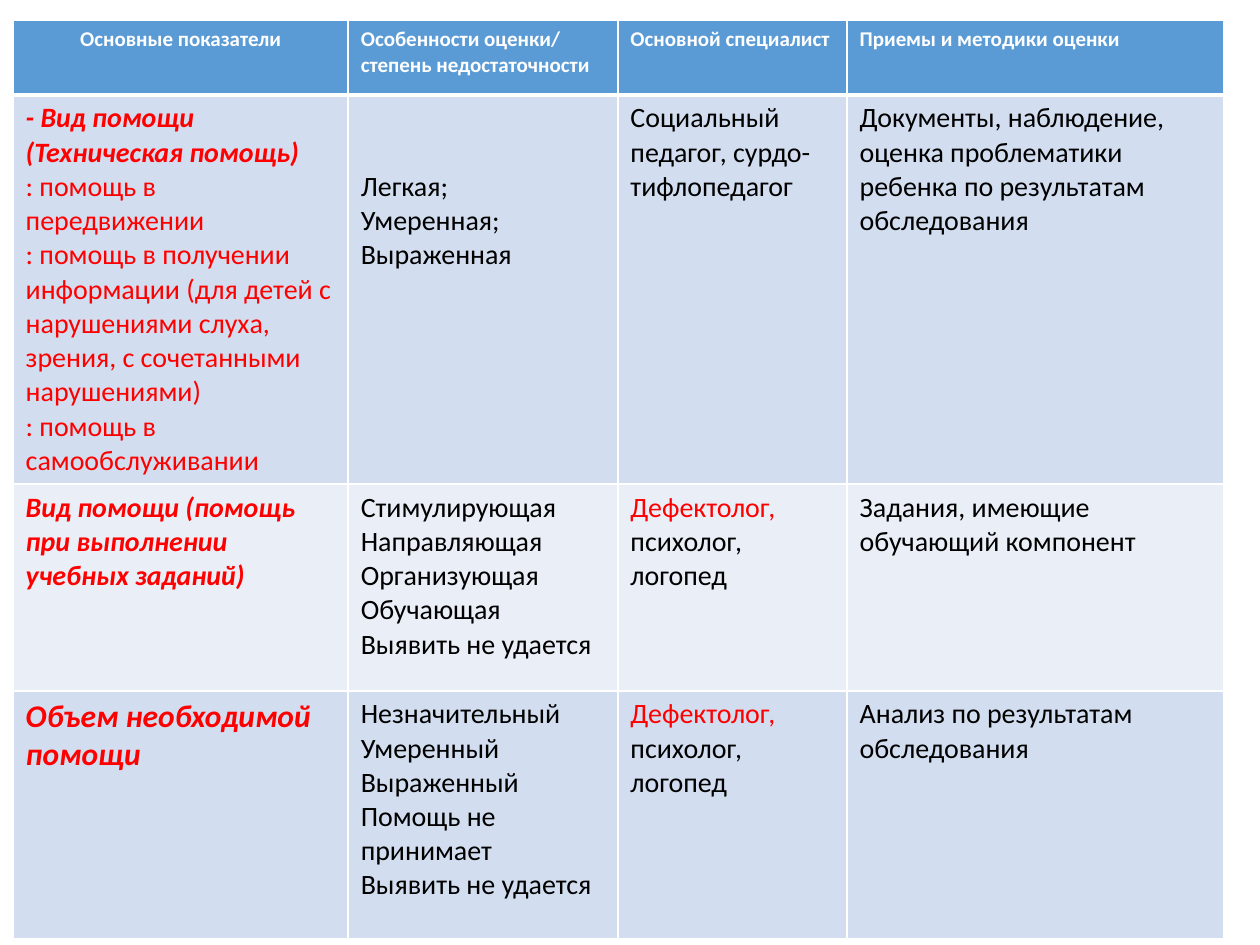
"""Build a slide with a table of support types, specialists and assessment methods."""
from lxml.etree import SubElement
from pptx import Presentation
from pptx.dml.color import RGBColor
from pptx.enum.text import PP_ALIGN as Align
from pptx.oxml.ns import qn
from pptx.util import Pt


def paint(target, color):
    target.solid()
    target.fore_color.rgb = RGBColor.from_string(color)


def lines(style, *texts):
    return [[(style, text)] for text in texts]


STYLES = {
    "head": ("FFFFFF", {"size": Pt(12), "bold": True, "italic": False}),
    "plain": ("000000", {"size": Pt(16), "bold": False, "italic": False}),
    "red": ("FF0000", {"size": Pt(16), "bold": False, "italic": False}),
    "key": ("FF0000", {"size": Pt(16), "bold": True, "italic": True}),
    "big key": ("FF0000", {"size": Pt(18), "bold": True, "italic": True}),
}
COLUMN_WIDTHS = [191.5, 154.1, 131, 215.3]
ROW_HEIGHTS = [42.5, 218.2, 118.1, 141.8]
ROW_FILLS = ["5B9BD5", "D2DEEF", "EAEFF7", "D2DEEF"]
ROWS = [
    [
        lines("head", "Основные показатели"),
        lines("head", "Особенности оценки/ степень недостаточности"),
        lines("head", "Основной специалист"),
        lines("head", "Приемы и методики оценки"),
    ],
    [
        lines("key", "- Вид помощи (Техническая помощь)") + lines(
            "red",
            ": помощь в передвижении",
            ": помощь в получении информации (для детей с нарушениями слуха, "
            "зрения, с сочетанными нарушениями)",
            ": помощь в самообслуживании",
        ),
        lines("plain", "Легкая;", "Умеренная;", "Выраженная"),
        lines("plain", "Социальный педагог, сурдо-тифлопедагог"),
        lines("plain", "Документы, наблюдение, оценка проблематики ребенка "
              "по результатам обследования"),
    ],
    [
        lines("key", "Вид помощи (помощь при выполнении учебных заданий)"),
        lines("plain", "Стимулирующая", "Направляющая", "Организующая",
              "Обучающая", "Выявить не удается"),
        [[("red", "Дефектолог, "), ("plain", "психолог, логопед")]],
        lines("plain", "Задания, имеющие обучающий компонент"),
    ],
    [
        lines("big key", "Объем необходимой помощи"),
        lines("plain", "Незначительный", "Умеренный", "Выраженный",
              "Помощь не принимает", "Выявить не удается"),
        [[("red", "Дефектолог,"), ("plain", " психолог, логопед")]],
        lines("plain", "Анализ по результатам обследования"),
    ],
]

deck = Presentation()
deck.slide_width, deck.slide_height = Pt(720), Pt(540)
page = deck.slides.add_slide(deck.slide_layouts[6])
table = page.shapes.add_table(
    len(ROWS), len(COLUMN_WIDTHS), Pt(7.5), Pt(11.8),
    Pt(sum(COLUMN_WIDTHS)), Pt(sum(ROW_HEIGHTS)),
).table
for column, width in zip(table.columns, COLUMN_WIDTHS):
    column.width = Pt(width)

for row_index, (row, height, fill) in enumerate(zip(ROWS, ROW_HEIGHTS, ROW_FILLS)):
    table.rows[row_index].height = Pt(height)
    edge_widths = {"lnL": 1, "lnR": 1, "lnT": 3 if row_index == 1 else 1,
                   "lnB": 3 if row_index == 0 else 1}
    for column_index, paragraphs in enumerate(row):
        cell = table.cell(row_index, column_index)
        properties = cell._tc.get_or_add_tcPr()
        for edge, width in edge_widths.items():
            line = SubElement(properties, qn(f"a:{edge}"), w=str(Pt(width)))
            solid = SubElement(line, qn("a:solidFill"))
            SubElement(solid, qn("a:srgbClr"), val="FFFFFF")
        paint(cell.fill, fill)
        margins = {"margin_left": 7.2, "margin_right": 7.2,
                   "margin_top": 3.6, "margin_bottom": 3.6}
        for name, value in margins.items():
            setattr(cell, name, Pt(value))
        frame = cell.text_frame
        for number, spans in enumerate(paragraphs):
            para = frame.add_paragraph() if number else frame.paragraphs[0]
            for style, text in spans:
                span = para.add_run()
                span.text = text
                color, formats = STYLES[style]
                span.font.name = "Calibri"
                paint(span.font.fill, color)
                for name, value in formats.items():
                    setattr(span.font, name, value)

table.cell(0, 0).text_frame.paragraphs[0].alignment = Align.CENTER
table.cell(1, 1).margin_top = Pt(42.6)
deck.save("out.pptx")
